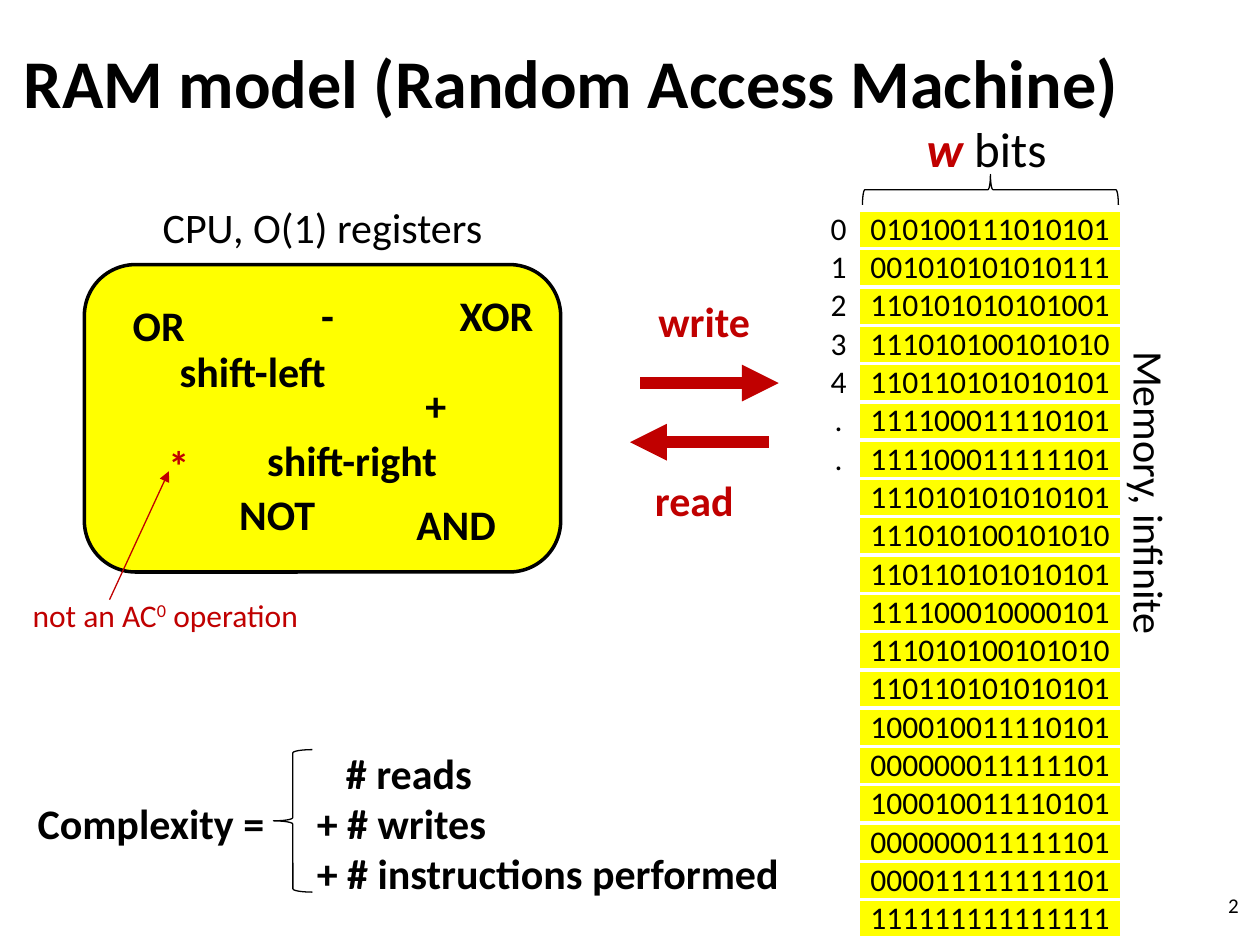
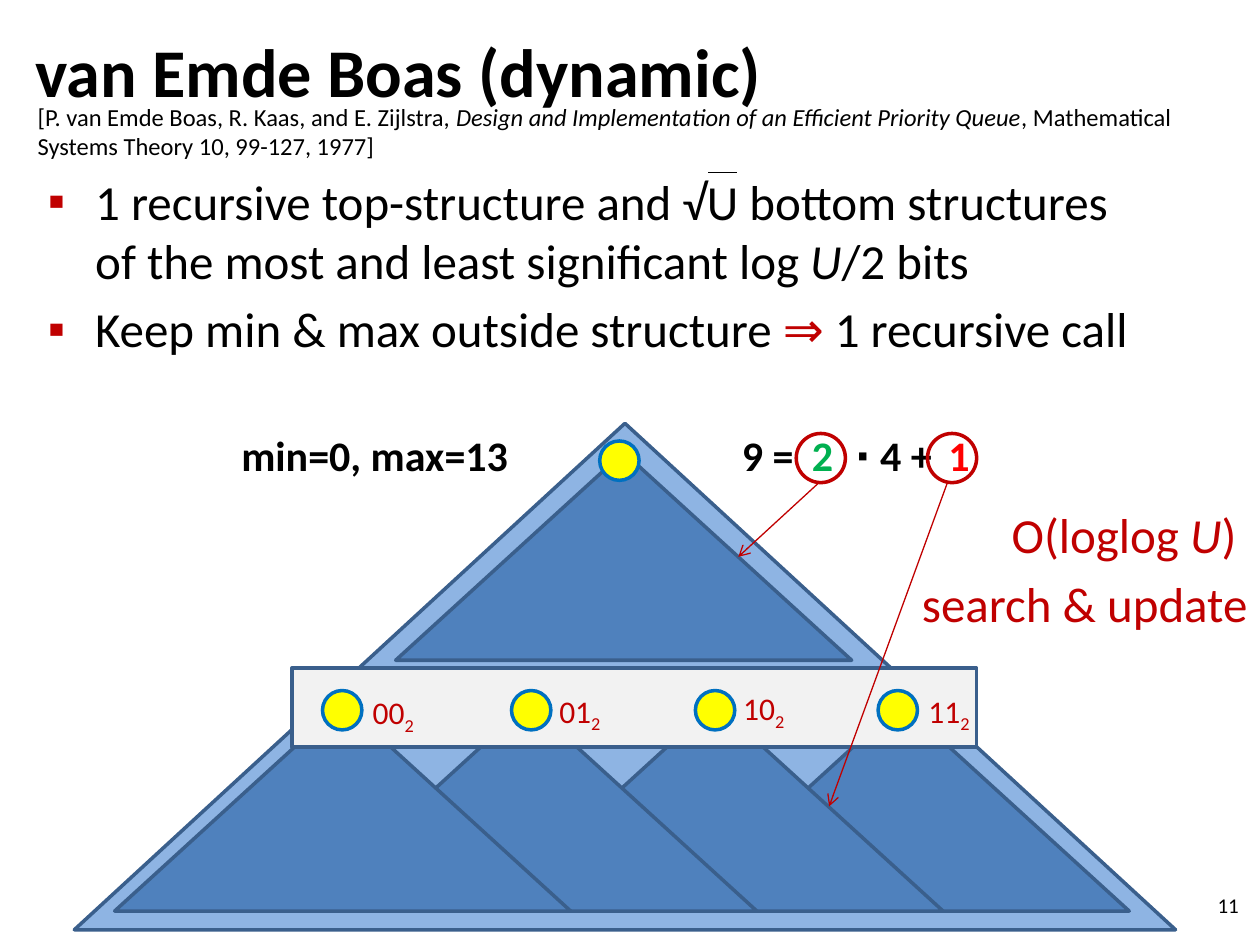
from lxml import etree
from pptx import Presentation
from pptx.dml.color import RGBColor
from pptx.enum.shapes import MSO_CONNECTOR, MSO_SHAPE
from pptx.enum.text import MSO_ANCHOR, MSO_AUTO_SIZE, PP_ALIGN
from pptx.oxml.ns import qn
from pptx.util import Pt

LEFT, CENTER, RIGHT = PP_ALIGN.LEFT, PP_ALIGN.CENTER, PP_ALIGN.RIGHT
MIDDLE, NO_FIT = MSO_ANCHOR.MIDDLE, MSO_AUTO_SIZE.NONE
STRAIGHT = MSO_CONNECTOR.STRAIGHT
BRACE, ROUNDED, RECT = MSO_SHAPE.LEFT_BRACE, MSO_SHAPE.ROUNDED_RECTANGLE, MSO_SHAPE.RECTANGLE
OVAL, TRIANGLE = MSO_SHAPE.OVAL, MSO_SHAPE.ISOSCELES_TRIANGLE

FONT = "Calibri"
COLORS = {
    "black": "000000", "white": "FFFFFF", "red": "C00000", "yellow": "FFFF00",
    "green": "00B050", "bright_red": "FF0000", "pale_blue": "8EB4E3", "blue": "4F81BD",
    "outline": "3A5F8C", "ring": "0070C0", "gray": "F2F2F2",
}

# ---- Content: RAM model ----
MEMORY = [
    "010100111010101", "001010101010111", "110101010101001", "111010100101010",
    "110110101010101", "111100011110101", "111100011111101", "111010101010101",
    "111010100101010", "110110101010101", "111100010000101", "111010100101010",
    "110110101010101", "100010011110101", "000000011111101", "100010011110101",
    "000000011111101", "000011111111101", "111111111111111",
]
ADDRESSES = ["0", "1", "2", "3", "4", ".", "."]
# operation, centre x, top, colour
OPERATIONS = [
    ("-", 187.2, 162, "black"), ("NOT", 158.4, 275.8, "black"),
    ("shift-right", 201.2, 244.8, "black"), ("XOR", 283.7, 162, "black"),
    ("AND", 260.6, 281.5, "black"), ("*", 102.2, 247.7, "red"),
    ("+", 249.1, 213.1, "black"), ("shift-left", 144.4, 193.7, "black"),
    ("OR", 90.7, 167.8, "black"),
]
# label, label box, arrow start, arrow end
TRANSFERS = [
    ("write", (354.2, 165.6, 96.5, 36), (365.8, 218.9), (445, 218.9)),
    ("read", (348.5, 267.8, 96.5, 36), (439.2, 252.7), (360, 252.7)),
]
COSTS = ["# reads", "+ # writes", "+ # instructions performed"]

# ---- Content: van Emde Boas ----
CITATION = [
    ("[P. van Emde Boas, R. Kaas, and E. Zijlstra, ", {}),
    ("Design and Implementation of an Efficient Priority Queue", {"italic": True}),
    (", Mathematical Systems Theory 10, 99-127, 1977]", {}),
]
BULLETS = [
    [("1 recursive top-structure and √U bottom structures \n"
      "of the most and least significant log ", {}), ("U", {"italic": True}), ("/2 bits", {})],
    [("Keep min & max outside structure ", {}), ("⇒ ", {"color": "red"}),
     ("1 recursive call", {})],
]
BOUNDS = [
    [("O(loglog ", {}), ("U", {"italic": True}), (") ", {})],
    [("search & update", {})],
]
# bits, dot left, label left, label top
SUBTREES = [
    ("00", 184.3, 205.9, 392.4), ("01", 292.3, 312.5, 391.7),
    ("10", 397.4, 417.6, 390.2), ("11", 501.8, 523.4, 391.7),
]
EXAMPLE = [("9 =\t", {}), ("2", {"color": "green"}), ("\t∙ 4 +\t", {}),
           ("1", {"color": "bright_red"})]
EXAMPLE_TABS = [40, 64.5, 118]
EXAMPLE_RINGS = [455, 530]
EXAMPLE_ARROWS = [((468, 275.8), (421.9, 318.2)), ((541.4, 275.8), (473.8, 460.8))]


# ---- Helpers ----
def rgb(name):
    return RGBColor.from_string(COLORS[name])


def pts(*values):
    return [Pt(v) for v in values]


def sub(parent, tag, **attrs):
    return etree.SubElement(parent, qn(tag), attrs)


def write(p, content, size, color="black", bold=False, align=LEFT):
    """Fill a paragraph with a string or a list of (text, style) runs."""
    p.alignment = align
    f = p.font
    f.name, f.size, f.bold = FONT, Pt(size), bold
    f.color.rgb = rgb(color)
    runs = [(content, {})] if isinstance(content, str) else content
    for text, style in runs:
        for i, line in enumerate(text.split("\n")):
            if i:
                p.add_line_break()
            r = p.add_run()
            r.text = line
            if "color" in style:
                r.font.color.rgb = rgb(style["color"])
            if "bold" in style:
                r.font.bold = style["bold"]
            if "italic" in style:
                r.font.italic = style["italic"]
            if "baseline" in style:
                r.font._element.set("baseline", str(style["baseline"] * 1000))


def add_text(s, box, content, size=24, anchor=None, **style):
    """Add a text box; each entry of a list of strings is a paragraph."""
    sp = s.shapes.add_textbox(*pts(*box))
    tf = sp.text_frame
    tf.word_wrap = True
    if anchor is not None:
        tf.vertical_anchor = anchor
    is_lines = isinstance(content, list) and isinstance(content[0], str)
    for i, text in enumerate(content if is_lines else [content]):
        write(tf.add_paragraph() if i else tf.paragraphs[0], text, size, **style)
    return sp


def add_shape(s, kind, box, fill=None, line="black", width=2):
    sp = s.shapes.add_shape(kind, *pts(*box))
    sp.shadow.inherit = False
    if fill:
        sp.fill.solid()
        sp.fill.fore_color.rgb = rgb(fill)
    else:
        sp.fill.background()
    sp.line.color.rgb = rgb(line)
    sp.line.width = Pt(width)
    return sp


def add_line(s, start, end, color="red", width=0.75, head=None):
    c = s.shapes.add_connector(STRAIGHT, *pts(*start, *end))
    c.line.color.rgb = rgb(color)
    c.line.width = Pt(width)
    if head:
        sub(c.line._get_or_add_ln(), "a:tailEnd", type=head)
    sub(c._element.spPr, "a:effectLst")


def set_bullet(p, char=None):
    pPr = p._p.get_or_add_pPr()
    if char:
        sub(sub(pPr, "a:buClr"), "a:srgbClr", val=COLORS["red"])
        sub(pPr, "a:buChar", char=char)
    else:
        sub(pPr, "a:buNone")


def set_tabs(p, stops):
    tabs = etree.Element(qn("a:tabLst"))
    for stop in stops:
        sub(tabs, "a:tab", pos=str(Pt(stop)), algn="l")
    p._p.pPr.find(qn("a:defRPr")).addprevious(tabs)


def place(sp, box):
    sp.left, sp.top, sp.width, sp.height = pts(*box)
    sp.text_frame.auto_size = NO_FIT
    sp.text_frame.word_wrap = True
    return sp.text_frame


def new_slide(prs, layout, title, title_box, number):
    s = prs.slides.add_slide(prs.slide_layouts[layout])
    tf = place(s.shapes.title, title_box)
    tf.vertical_anchor = MIDDLE
    write(tf.paragraphs[0], title, 39, bold=True)
    add_text(s, (547.2, 502.6, 167.8, 28.8), number, 12, MIDDLE, align=RIGHT)
    return s


def fill_cell(cell, text, fill=None):
    cell.margin_left = cell.margin_right = cell.margin_top = cell.margin_bottom = 0
    cell.vertical_anchor = MIDDLE
    if text:
        write(cell.text_frame.paragraphs[0], text, 18, align=CENTER)
    tcPr = cell._tc.get_or_add_tcPr()
    for side in ("a:lnL", "a:lnR", "a:lnT", "a:lnB"):
        ln = sub(tcPr, side, w=str(Pt(2.25)))
        sub(sub(ln, "a:solidFill"), "a:srgbClr", val=COLORS["white"])
    if fill:
        cell.fill.solid()
        cell.fill.fore_color.rgb = rgb(fill)
    else:
        cell.fill.background()


# ---- Slides ----
def ram_model(prs):
    s = new_slide(prs, 5, "RAM model (Random Access Machine)", (6.5, 20.9, 648, 51.1), "2")

    # Memory words with their addresses
    row_height = 21.9
    table = s.shapes.add_table(len(MEMORY), 2, *pts(468, 120.2, 173.2, row_height * len(MEMORY))).table
    table.first_row = table.horz_banding = False
    table.columns[0].width, table.columns[1].width = pts(22.5, 150.7)
    for i, word in enumerate(MEMORY):
        table.rows[i].height = Pt(row_height)
        fill_cell(table.cell(i, 0), ADDRESSES[i] if i < len(ADDRESSES) else "")
        fill_cell(table.cell(i, 1), word, "yellow")
    add_text(s, (527, 263.5, 260.6, 36), "Memory, infinite", align=CENTER).rotation = 90
    add_shape(s, BRACE, (557.3, 35.3, 17.3, 146.2), width=0.75).rotation = 90
    add_text(s, (478.8, 64.1, 169.9, 41),
             [("w", {"color": "red", "bold": True, "italic": True}), (" bits", {})],
             28, align=CENTER)

    # CPU and its operations
    add_shape(s, ROUNDED, (48.2, 151.2, 272.2, 175.7), "yellow")
    for name, center, top, color in OPERATIONS:
        add_text(s, (center - 74, top, 148, 36), name, color=color, bold=True, align=CENTER)
    add_text(s, (54, 111.6, 260.6, 36), "CPU, O(1) registers", align=CENTER)
    add_line(s, (62.6, 342.7), (96.5, 269.3), head="triangle")
    add_text(s, (11.5, 337, 351.4, 28.8),
             [("not an AC", {}), ("0", {"baseline": 30}), (" operation", {})], 18, color="red")

    # Transfers between CPU and memory
    for name, box, start, end in TRANSFERS:
        add_line(s, start, end, width=7, head="triangle")
        add_text(s, box, name, color="red", bold=True, align=CENTER)

    # Complexity formula
    add_text(s, (14.4, 452.4, 150, 36), "Complexity =", bold=True)
    costs = add_text(s, (174, 423.4, 316, 94.3), COSTS, bold=True)
    costs.text_frame.paragraphs[0]._p.pPr.set("marL", str(Pt(16.6)))
    add_shape(s, BRACE, (156.2, 428.4, 22.3, 81.4), width=0.75)


def van_emde_boas(prs):
    s = new_slide(prs, 1, "van Emde Boas (dynamic)", (13, 9.4, 648, 61.2), "11")
    add_text(s, (14.4, 54.7, 705.6, 51.1), CITATION, 14)

    # Main points, then the bounds at the right
    tf = place(s.placeholders[1], (20.2, 94.3, 699.8, 362.9))
    for i, content in enumerate(BULLETS + BOUNDS):
        p = tf.add_paragraph() if i else tf.paragraphs[0]
        is_bullet = i < len(BULLETS)
        if i == len(BULLETS):
            p.space_before = Pt(84)
        set_bullet(p, "▪" if is_bullet else None)
        write(p, content, 28, "black" if is_bullet else "red", align=LEFT if is_bullet else RIGHT)
    add_line(s, (404.6, 98.6), (421.2, 98.6), "black")

    # Recursive triangles: the whole, the top, then the bottoms from the right
    add_shape(s, TRIANGLE, (42.5, 241.9, 629.3, 289.4), "pale_blue", "outline")
    corners = [(226.1, 258.5)] + [(65.5 + 106.4 * i, 401.8) for i in (3, 2, 1, 0)]
    for left, top in corners:
        add_shape(s, TRIANGLE, (left, top, 260.6, 118.8), "blue", "outline")

    # Roots of the structures
    add_shape(s, RECT, (167, 381.6, 391, 45.4), "gray", "outline")
    dots = [(342.7, 252)] + [(left, 394.6) for _, left, _, _ in SUBTREES]
    for left, top in dots:
        add_shape(s, OVAL, (left, top, 22.5, 22.5), "yellow", "ring")
    for bits, _, left, top in SUBTREES:
        add_text(s, (left, top, 60, 28.8), [(bits, {}), ("2", {"baseline": -25})], 18, color="red")

    # Example query
    add_text(s, (70.6, 241.9, 226.8, 36), "min=0, max=13", bold=True, align=RIGHT)
    example = add_text(s, (416.9, 241.9, 147.6, 36), EXAMPLE, bold=True)
    set_tabs(example.text_frame.paragraphs[0], EXAMPLE_TABS)
    for left in EXAMPLE_RINGS:
        add_shape(s, OVAL, (left, 247.7, 28.1, 28.1), line="red")
    for start, end in EXAMPLE_ARROWS:
        add_line(s, start, end, head="arrow")


def main():
    prs = Presentation()
    prs.slide_width, prs.slide_height = pts(720, 540)
    ram_model(prs)
    van_emde_boas(prs)
    prs.save("out.pptx")


if __name__ == "__main__":
    main()
